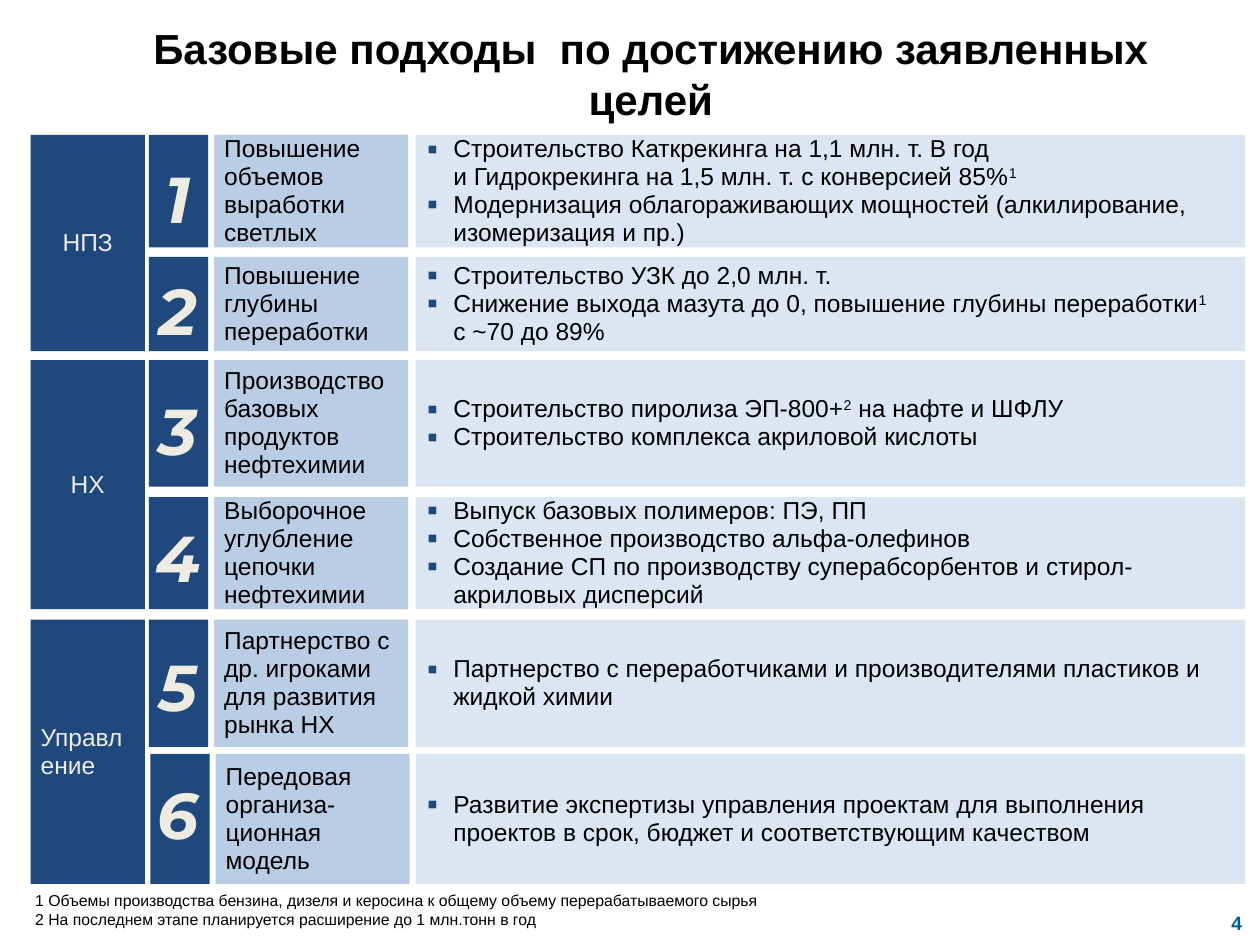
import pptx
import pptx.dml.color
import pptx.enum.shapes
import pptx.enum.text
import pptx.oxml.ns
import pptx.util
from dataclasses import dataclass
from lxml import etree

Cm = pptx.util.Cm
Pt = pptx.util.Pt
ALIGN = pptx.enum.text.PP_ALIGN
ANCHOR = pptx.enum.text.MSO_ANCHOR
RECT = pptx.enum.shapes.MSO_SHAPE.RECTANGLE


@dataclass(frozen=True)
class Theme:
    dark: str = "1F497D"
    mid: str = "B9CDE5"
    pale: str = "DCE6F2"
    cream: str = "EEECE1"
    white: str = "FFFFFF"
    black: str = "000000"
    blue: str = "005E9D"
    face: str = "Arial"
    digit: str = "Montserrat"
    title: float = 24
    body: float = 14
    note: float = 9
    page: float = 11
    big: float = 37


def color(code):
    return pptx.dml.color.RGBColor.from_string(code)


def child(parent, tag, **attrs):
    return etree.SubElement(parent, pptx.oxml.ns.qn(tag), attrs)


class Deck:
    def __init__(self, theme):
        self.theme = theme
        self.file = pptx.Presentation()
        self.file.slide_width = Cm(25.4)
        self.file.slide_height = Cm(19.05)
        self.slide = self.file.slides.add_slide(self.file.slide_layouts[6])

    def place(self, left, top, width, height):
        return [Cm(v) for v in (left, top, width, height)]

    def block(self, area, fill):
        """Plain filled rectangle."""
        shape = self.slide.shapes.add_shape(RECT, *self.place(*area))
        shape.shadow.inherit = False
        shape.fill.solid()
        shape.fill.fore_color.rgb = color(fill)
        shape.line.fill.background()
        return shape

    def label(self, area, lines, **style):
        """Text box without fill."""
        box = self.slide.shapes.add_textbox(*self.place(*area))
        self.set_text(box, lines, **style)

    def card(self, area, fill, lines, **style):
        """Filled rectangle with text set in its middle."""
        style = {"anchor": ANCHOR.MIDDLE, "pads": (0.2, 0.1, 0.2, 0.1),
                 "space": 0.95} | style
        self.set_text(self.block(area, fill), lines, **style)

    def set_text(self, shape, lines, size=None, ink=None, face=None,
                 bold=False, slant=False, align=ALIGN.LEFT, anchor=ANCHOR.TOP,
                 wrap=True, pads=(0.25, 0.13, 0.25, 0.13), space=None,
                 mark=False, edge=None):
        theme = self.theme
        frame = shape.text_frame
        sides = ("margin_left", "margin_top", "margin_right", "margin_bottom")
        form = dict(zip(sides, map(Cm, pads)))
        form |= {"word_wrap": wrap, "vertical_anchor": anchor}
        for key, value in form.items():
            setattr(frame, key, value)
        font = {"size": Pt(size or theme.body), "name": face or theme.face,
                "bold": bold, "italic": slant}
        for i, line in enumerate(lines):
            para = frame.paragraphs[0] if i == 0 else frame.add_paragraph()
            if mark:
                self.bullet(para)
            para.alignment = align
            if space:
                para.line_spacing = space
            # Text between carets is raised, a vertical bar breaks the line
            for j, part in enumerate(line.split("^")):
                for k, piece in enumerate(part.split("|")):
                    if k:
                        para.add_line_break()
                    if not piece:
                        continue
                    run = para.add_run()
                    run.text = piece
                    for key, value in font.items():
                        setattr(run.font, key, value)
                    run.font.color.rgb = color(ink or theme.black)
                    props = run._r.get_or_add_rPr()
                    if j % 2:
                        props.set("baseline", "30000")
                    if edge:
                        rim = child(props, "a:ln", w="9525")
                        child(child(rim, "a:solidFill"), "a:srgbClr", val=edge)
                        props.insert(0, rim)

    def bullet(self, para):
        props = para._p.get_or_add_pPr()
        props.set("marL", str(Cm(0.56)))
        props.set("indent", str(-Cm(0.53)))
        child(child(props, "a:buClr"), "a:srgbClr", val=self.theme.dark)
        child(props, "a:buSzPct", val="125000")
        child(props, "a:buFont", typeface=self.theme.face)
        child(props, "a:buChar", char="▪")

    def digit(self, top, text):
        theme = self.theme
        self.label((3.33, top, 0.5, 1.6), [text], size=theme.big,
                   ink=theme.cream, face=theme.digit, bold=True, slant=True,
                   align=ALIGN.CENTER, wrap=False, edge=theme.white)


# Rows: top, height, digit top, shift to the right, aim, steps
ROWS = [
    (2.72, 2.27, 3.07, 0, "Повышение объемов выработки светлых",
     ["Строительство Каткрекинга на 1,1 млн. т. В год|"
      "и Гидрокрекинга на 1,5 млн. т. с конверсией 85%^1^",
      "Модернизация облагораживающих мощностей (алкилирование, "
      "изомеризация и пр.)"]),
    (5.18, 1.9, 5.33, 0, "Повышение глубины переработки",
     ["Строительство УЗК до 2,0 млн. т.",
      "Снижение выхода мазута до 0, повышение глубины переработки^1^|"
      "с ~70 до 89%"]),
    (7.26, 2.55, 7.75, 0, "Производство базовых продуктов нефтехимии",
     ["Строительство пиролиза ЭП-800+^2^ на нафте и ШФЛУ",
      "Строительство комплекса акриловой кислоты"]),
    (10.02, 2.26, 10.31, 0, "Выборочное углубление цепочки нефтехимии",
     ["Выпуск базовых полимеров: ПЭ, ПП",
      "Собственное производство альфа-олефинов",
      "Создание СП по производству суперабсорбентов и "
      "стирол-акриловых дисперсий"]),
    (12.49, 2.57, 12.9, 0, "Партнерство с др. игроками для развития рынка НХ",
     ["Партнерство с переработчиками и производителями пластиков "
      "и жидкой химии"]),
    (15.2, 2.62, 15.49, 0.03, "Передовая организа-ционная модель",
     ["Развитие экспертизы управления проектам для выполнения проектов "
      "в срок, бюджет и соответствующим качеством"]),
]
# Each group spans two rows
GROUPS = [("НПЗ", ALIGN.CENTER), ("НХ", ALIGN.CENTER),
          ("Управление", ALIGN.LEFT)]


def main():
    theme = Theme()
    deck = Deck(theme)

    # Title
    deck.label((1.5, 0.33, 23.24, 2.72),
               ["Базовые подходы  по достижению заявленных целей"],
               size=theme.title, bold=True, align=ALIGN.CENTER)

    # Groups on the left
    for i, (name, align) in enumerate(GROUPS):
        first, last = ROWS[2 * i:2 * i + 2]
        top = first[0]
        deck.card((0.62, top, 2.3, last[0] + last[1] - top), theme.dark,
                  [name], ink=theme.cream, align=align, pads=(0.2,) * 4)

    # Numbered rows
    for i, (top, tall, high, shift, aim, steps) in enumerate(ROWS, 1):
        deck.block((3 + shift, top, 1.2, tall), theme.dark)
        deck.digit(high, str(i))
        deck.card((4.32 + shift, top, 3.91, tall), theme.mid, [aim])
        deck.card((8.38, top, 16.72, tall), theme.pale, steps, mark=True)

    # Footnotes and page number
    deck.label((0.71, 17.96, 24.23, 0.76),
               ["1 Объемы производства бензина, дизеля и керосина "
                "к общему объему перерабатываемого сырья",
                "2 На последнем этапе планируется расширение "
                "до 1 млн.тонн в год"],
               size=theme.note, anchor=ANCHOR.BOTTOM, pads=(0,) * 4)
    deck.label((20.19, 18.14, 5.08, 0.91), ["4"], size=theme.page,
               ink=theme.blue, bold=True, align=ALIGN.RIGHT,
               anchor=ANCHOR.MIDDLE, pads=(0.23, 0.1, 0.23, 0.1))

    deck.file.save("out.pptx")


if __name__ == "__main__":
    main()
